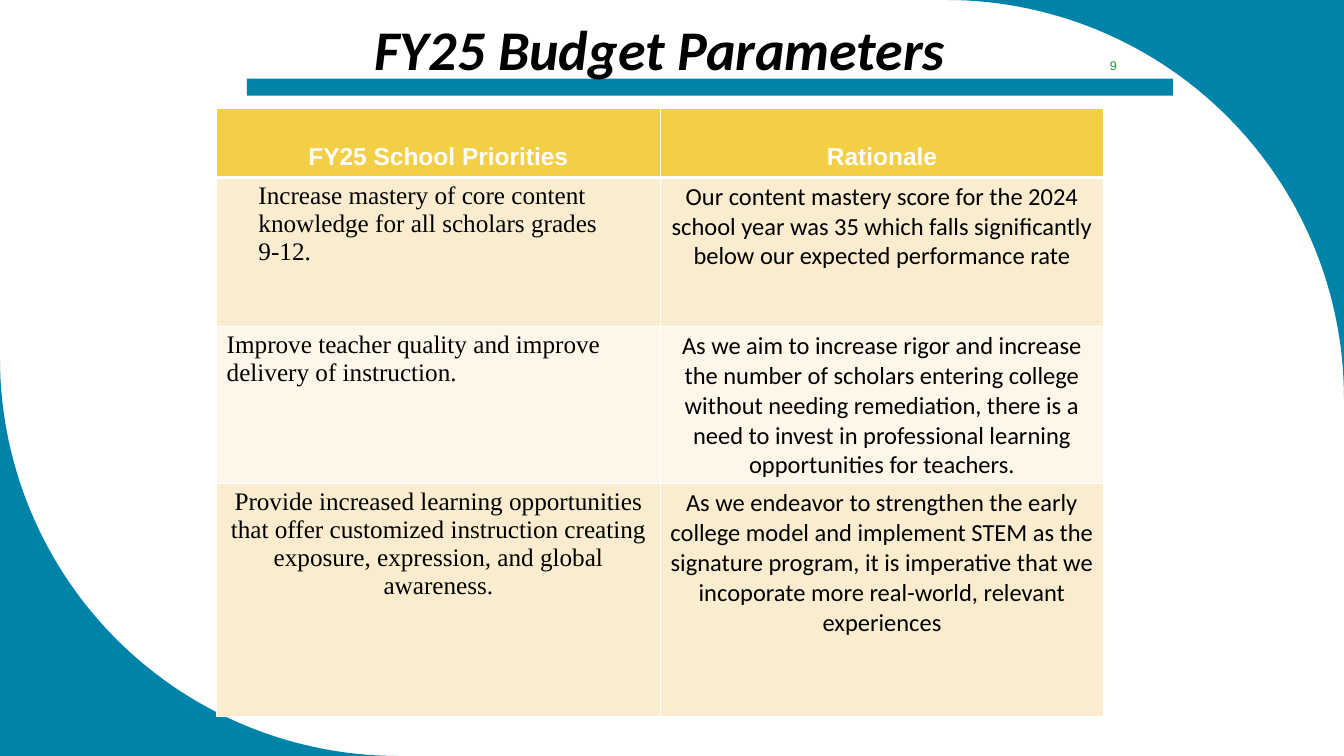
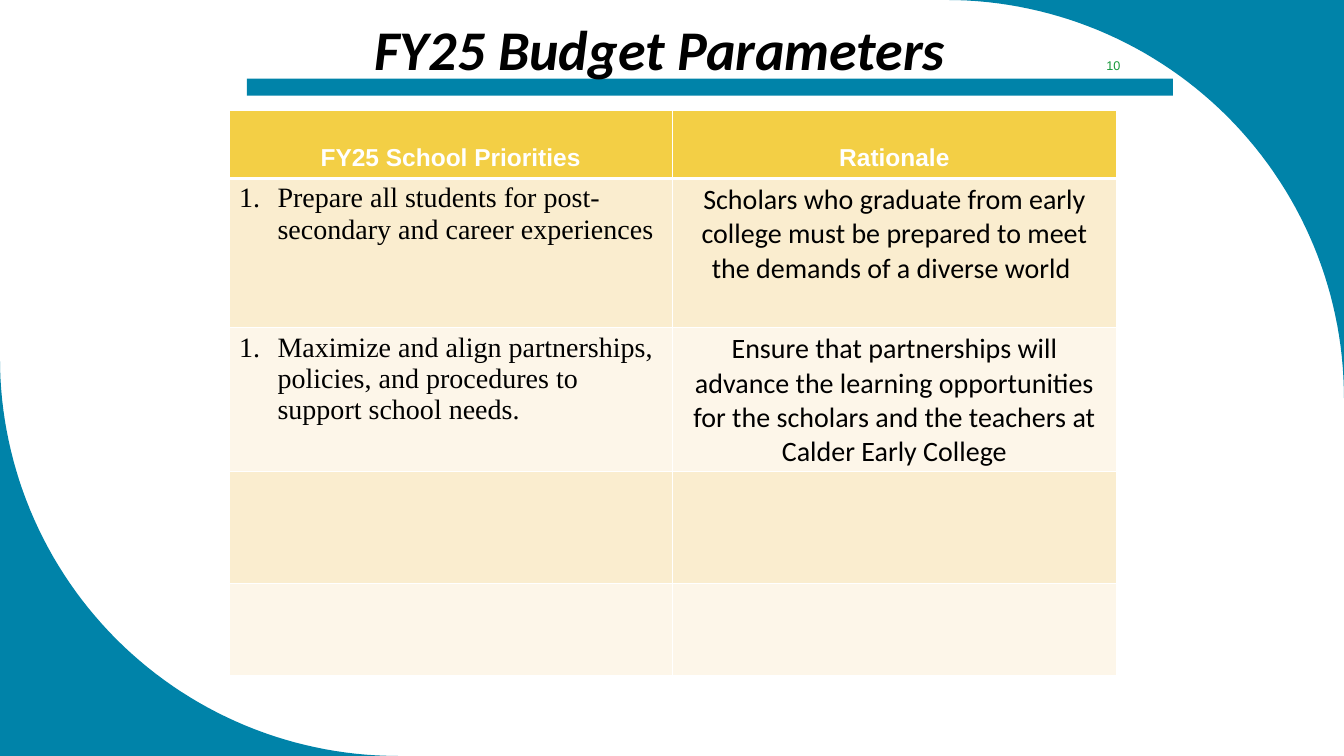
from math import cos, sin, pi

from lxml import etree
from pptx import Presentation
from pptx.dml.color import RGBColor
from pptx.enum.shapes import MSO_SHAPE
from pptx.enum.text import MSO_ANCHOR, PP_ALIGN as AL
from pptx.oxml.ns import qn
from pptx.util import Cm, Pt

# Colours and text formats
TEAL = RGBColor(0x00, 0x83, 0xA9)
GOLD = RGBColor(0xF3, 0xCF, 0x45)
SAND = RGBColor(0xFA, 0xED, 0xCF)
CREAM = RGBColor(0xFD, 0xF6, 0xE9)
GREEN = RGBColor(0x15, 0x98, 0x39)
WHITE = RGBColor(0xFF, 0xFF, 0xFF)
BLACK = RGBColor(0x00, 0x00, 0x00)

TITLE = dict(name="Calibri", size=Pt(40), bold=True, italic=True, color=BLACK)
NUMBER = dict(name="Arial", size=Pt(9), color=GREEN)
HEAD = dict(name="Arial", size=Pt(17.5), bold=True, color=WHITE)
PRIORITY = dict(name="Times New Roman", bold=False, color=BLACK)
RATIONALE = dict(name="Calibri", bold=False, color=BLACK)

# Page geometry
WIDTH, HEIGHT = Cm(33.87), Cm(19.05)
RADIUS = Cm(10.03)
COLUMN = Cm(11.18)
ARC_STEPS = 60
HEADINGS = ["FY25 School Priorities", "Rationale"]

# Each row: height in cm, priority lines, priority layout, rationale
SLIDES = [
    dict(number="9", left=5.46, top=2.74, sizes=(18, 17.5), rows=[
        (3.76, ["Increase mastery of core content",
                "knowledge for all scholars grades", "9-12."], "indent",
         "Our content mastery score for the 2024 school year was 35 which "
         "falls significantly below our expected performance rate"),
        (3.96, ["Improve teacher quality and improve delivery of instruction."],
         "left",
         "As we aim to increase rigor and increase the number of scholars "
         "entering college without needing remediation, there is a need to "
         "invest in professional learning opportunities for teachers."),
        (5.87, ["Provide increased learning opportunities that offer customized "
                "instruction creating exposure, expression, and global "
                "awareness."], "center",
         "As we endeavor to strengthen the early college model and implement "
         "STEM as the signature program, it is imperative that we incoporate "
         "more real-world, relevant experiences"),
    ]),
    dict(number="10", left=5.77, top=2.77, sizes=(20, 20), rows=[
        (3.76, ["Prepare all students for post-secondary and career experiences"],
         "number",
         "Scholars who graduate from early college must be prepared to meet "
         "the demands of a diverse world\u00a0"),
        (3.63, ["Maximize and align partnerships, policies, and procedures to "
                "support school needs."], "number",
         "Ensure that partnerships will advance the learning opportunities "
         "for the scholars and the teachers at Calder Early College"),
        (2.82, [], "left", ""),
        (2.31, [], "left", ""),
    ]),
]


def write(tf, lines, fmt, layout="center"):
    """Write one paragraph per line with a font format and a layout."""
    for i, line in enumerate(lines):
        p = tf.paragraphs[0] if i == 0 else tf.add_paragraph()
        p.alignment = AL.CENTER if layout == "center" else AL.LEFT
        pPr = p._p.get_or_add_pPr()
        if layout == "indent":
            pPr.set("marL", str(Cm(0.8)))
        elif layout == "number":
            pPr.set("marL", str(Cm(0.97)))
            pPr.set("indent", str(-Cm(0.97)))
            etree.SubElement(pPr, qn("a:buAutoNum"), type="arabicPeriod")
        r = p.add_run()
        r.text = line
        for key, value in fmt.items():
            if key == "color":
                r.font.color.rgb = value
            else:
                setattr(r.font, key, value)


def style_cell(cell, fill, top=1, bottom=1):
    """Set the margins, white borders (points) and fill of a cell."""
    cell.margin_top, cell.margin_bottom = Cm(0.11), Cm(0.05)
    tcPr = cell._tc.get_or_add_tcPr()
    for side, points in zip("LRTB", (1, 1, top, bottom)):
        ln = etree.SubElement(tcPr, qn("a:ln" + side), w=str(Pt(points)))
        solid = etree.SubElement(ln, qn("a:solidFill"))
        etree.SubElement(solid, qn("a:srgbClr"), val=str(WHITE))
    cell.fill.solid()
    cell.fill.fore_color.rgb = fill


prs = Presentation()
prs.slide_width, prs.slide_height = WIDTH, HEIGHT

# Corner outlines: the corner point, then the arc that cuts it off
quarter = [i * pi / 2 / ARC_STEPS for i in range(ARC_STEPS + 1)]
corners = []
for x, y, dx, dy in ((WIDTH, 0, 1, -1), (0, HEIGHT, -1, 1)):
    cx, cy = x - dx * RADIUS, y - dy * RADIUS
    arc = [(round(cx + dx * RADIUS * sin(a)), round(cy + dy * RADIUS * cos(a)))
           for a in quarter]
    corners.append(((x, y), arc))

for data in SLIDES:
    s = prs.slides.add_slide(prs.slide_layouts[6])

    # Corners and title rule
    blocks = []
    for (x, y), arc in corners:
        outline = s.shapes.build_freeform(x, y)
        outline.add_line_segments(arc, close=True)
        blocks.append(outline.convert_to_shape())
    blocks.append(s.shapes.add_shape(MSO_SHAPE.RECTANGLE, Cm(6.22), Cm(1.98),
                                     Cm(23.34), Cm(0.43)))
    for sp in blocks:
        sp.shadow.inherit = False
        sp.fill.solid()
        sp.fill.fore_color.rgb = TEAL
        sp.line.fill.background()

    # Title and slide number
    for text, fmt, box, anchor in (
        ("FY25 Budget Parameters", TITLE, (7.75, 0.23, 17.75, 1.96), MSO_ANCHOR.TOP),
        (data["number"], NUMBER, (27.03, 1.27, 2.06, 0.76), MSO_ANCHOR.MIDDLE),
    ):
        tf = s.shapes.add_textbox(*map(Cm, box)).text_frame
        tf.word_wrap = True
        tf.vertical_anchor = anchor
        write(tf, [text], fmt)

    # Table frame
    rows = data["rows"]
    heights = [Cm(h) for h in [1.73] + [row[0] for row in rows]]
    table = s.shapes.add_table(len(heights), 2, Cm(data["left"]), Cm(data["top"]),
                               2 * COLUMN, sum(heights)).table
    for column in table.columns:
        column.width = COLUMN
    for row, height in zip(table.rows, heights):
        row.height = height

    # Heading row
    for c, heading in enumerate(HEADINGS):
        cell = table.cell(0, c)
        style_cell(cell, GOLD, bottom=3)
        cell.margin_bottom = Cm(0.18)
        cell.vertical_anchor = MSO_ANCHOR.BOTTOM
        write(cell.text_frame, [heading], HEAD)

    # Body rows
    left_size, right_size = map(Pt, data["sizes"])
    for n, (_, priority, layout, rationale) in enumerate(rows, start=1):
        left, right = table.cell(n, 0), table.cell(n, 1)
        for cell in (left, right):
            style_cell(cell, SAND if n % 2 else CREAM, top=3 if n == 1 else 1)
        write(left.text_frame, priority, dict(PRIORITY, size=left_size), layout)
        if rationale:
            write(right.text_frame, [rationale], dict(RATIONALE, size=right_size))

prs.save("out.pptx")
